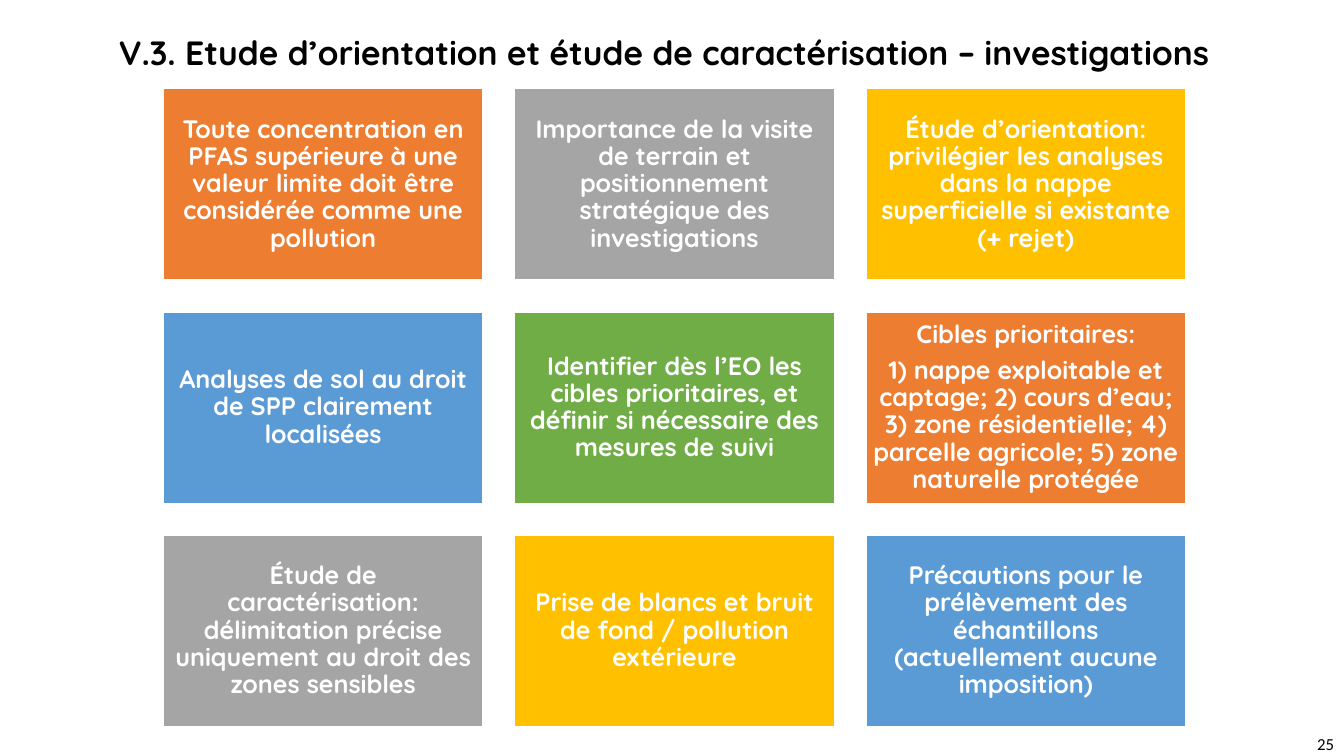
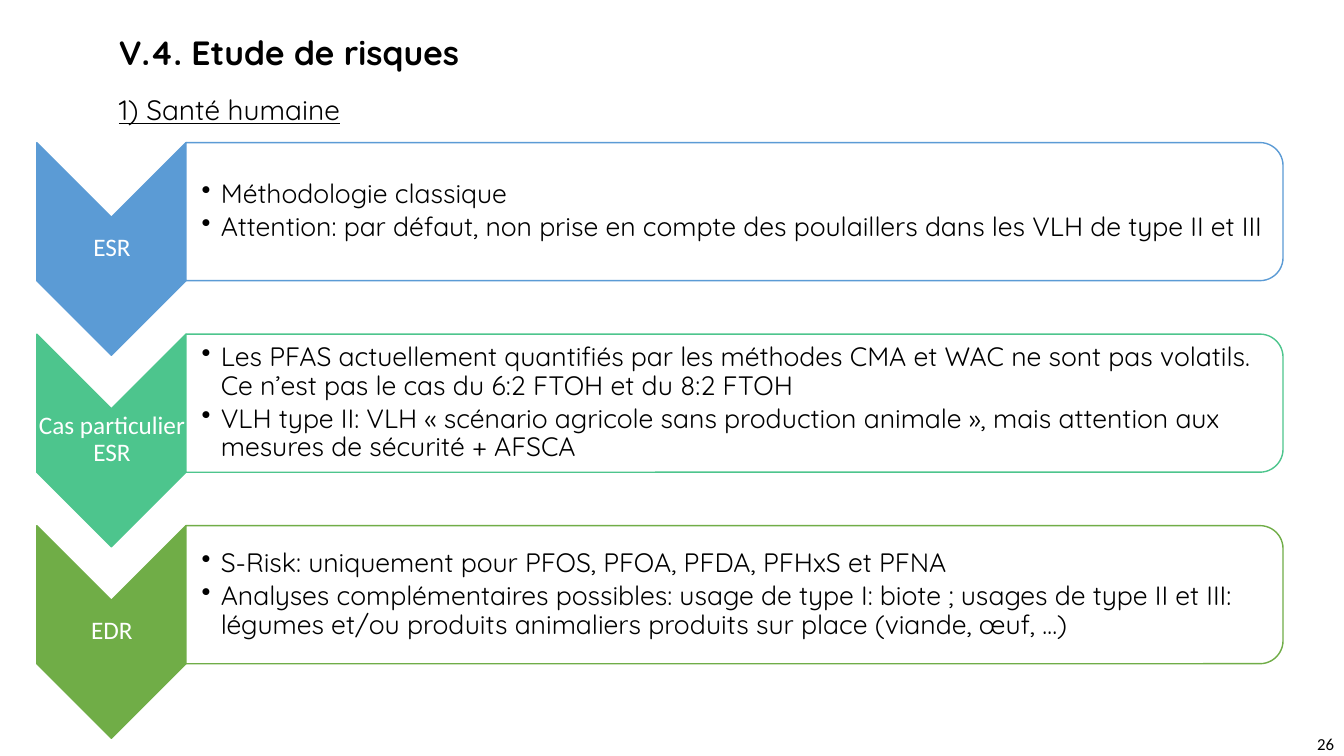
from pptx import Presentation
from pptx.dml.color import RGBColor as RGB
from pptx.enum.shapes import MSO_SHAPE as Kind
from pptx.enum.text import MSO_ANCHOR as Anchor, PP_ALIGN as Align
from pptx.oxml.ns import qn
from pptx.util import Inches, Pt
from lxml import etree

INK = {"black": "000000", "white": "FFFFFF", "orange": "ED7D31", "gray": "A5A5A5",
       "gold": "FFC000", "blue": "5B9BD5", "green": "70AD47", "mint": "4DC58D"}
HEAD = dict(size=24, bold=True, align=Align.JUSTIFY)

deck = Presentation()
deck.slide_width, deck.slide_height = Inches(13.33), Inches(7.5)


def draw(slide, kind, x, y, w, h, fill, line, turn=0):
    """Add a filled and outlined shape."""
    shape = slide.shapes.add_shape(kind, Inches(x), Inches(y), Inches(w), Inches(h))
    shape.shadow.inherit = False
    shape.rotation = turn
    shape.fill.solid()
    shape.fill.fore_color.rgb = RGB.from_string(INK[fill])
    shape.line.color.rgb = RGB.from_string(INK[line])
    shape.line.width = Pt(1)
    return shape


def write(shape, *lines, size=18, font="Quicksand", color="black", bold=False,
          under=False, align=Align.LEFT, anchor=Anchor.TOP, pad=None, left=None,
          lead=None, gap=0, bullet=False):
    """Put one paragraph per line into the shape."""
    frame = shape.text_frame
    frame.word_wrap = True
    frame.vertical_anchor = anchor
    if pad is not None:
        frame.margin_right = frame.margin_top = frame.margin_bottom = Inches(pad)
        frame.margin_left = Inches(pad if left is None else left)
    for i, line in enumerate(lines):
        para = frame.paragraphs[0] if i == 0 else frame.add_paragraph()
        if bullet:
            props = para._p.get_or_add_pPr()
            props.set("marL", str(Inches(0.19)))
            props.set("indent", str(-Inches(0.19)))
            etree.SubElement(props, qn("a:buChar"), char="•")
        para.text = line
        para.alignment = align
        if lead:
            para.line_spacing = lead
        if i:
            para.space_before = Pt(gap)
        face = para.font
        face.name, face.size, face.bold, face.underline = font, Pt(size), bold, under
        face.color.rgb = RGB.from_string(INK[color])


# Slides with their shared title and page number
pages = []
for num, title in [
    (25, "V.3. Etude d’orientation et étude de caractérisation – investigations"),
    (26, "V.4. Etude de risques"),
]:
    page = deck.slides.add_slide(deck.slide_layouts[6])
    box = page.shapes.add_textbox(Inches(10.33), Inches(7.23), Inches(3), Inches(0.3))
    write(box, str(num), size=12, font="Calibri", align=Align.RIGHT, anchor=Anchor.MIDDLE)
    box = page.shapes.add_textbox(Inches(1.08), Inches(0.27), Inches(11.4), Inches(0.5))
    write(box, title, **HEAD)
    pages.append(page)
grid, risk = pages

# Grid of nine cards, colours in rotation
cards = [
    ["Toute concentration en PFAS supérieure à une valeur limite doit être considérée comme une pollution"],
    ["Importance de la visite de terrain et positionnement stratégique des investigations"],
    ["Étude d’orientation: privilégier les analyses dans la nappe superficielle si existante (+ rejet)"],
    ["Analyses de sol au droit de SPP clairement localisées"],
    ["Identifier dès l’EO les cibles prioritaires, et définir si nécessaire des mesures de suivi"],
    ["Cibles prioritaires:",
     "1) nappe exploitable et captage; 2) cours d’eau; 3) zone résidentielle; "
     "4) parcelle agricole; 5) zone naturelle protégée"],
    ["Étude de caractérisation: délimitation précise uniquement au droit des zones sensibles"],
    ["Prise de blancs et bruit de fond / pollution extérieure"],
    ["Précautions pour le prélèvement des échantillons (actuellement aucune imposition)"],
]
wheel = ["orange", "gray", "gold", "blue", "green"]
for i, lines in enumerate(cards):
    row, col = divmod(i, 3)
    card = draw(grid, Kind.RECTANGLE, 1.62 + 3.485 * col, 0.88 + 2.215 * row, 3.17, 1.9,
                wheel[i % len(wheel)], "white")
    write(card, *lines, color="white", bold=True, align=Align.CENTER,
          anchor=Anchor.MIDDLE, pad=0.07, lead=0.9, gap=6.3)

# Subtitle of the risk slide
box = risk.shapes.add_textbox(Inches(1.08), Inches(0.87), Inches(10.49), Inches(0.5))
write(box, "1) Santé humaine", size=20, under=True)

# Chevron steps, each with a rounded panel
steps = [
    ("ESR", "blue",
     ["Méthodologie classique",
      "Attention: par défaut, non prise en compte des poulaillers dans les VLH de type II et III"]),
    ("Cas particulier ESR", "mint",
     ["Les PFAS actuellement quantifiés par les méthodes CMA et WAC ne sont pas volatils. "
      "Ce n’est pas le cas du 6:2 FTOH et du 8:2 FTOH",
      "VLH type II: VLH « scénario agricole sans production animale », "
      "mais attention aux mesures de sécurité + AFSCA"]),
    ("EDR", "green",
     ["S-Risk: uniquement pour PFOS, PFOA, PFDA, PFHxS et PFNA",
      "Analyses complémentaires possibles: usage de type I: biote ; usages de type II et III: "
      "légumes et/ou produits animaliers produits sur place (viande, œuf, …)"]),
]
for i, (name, tint, lines) in enumerate(steps):
    drop = 1.9 * i
    draw(risk, Kind.CHEVRON, 0.05, 1.73 + drop, 2.11, 1.48, tint, tint, turn=90)
    box = risk.shapes.add_textbox(Inches(0.37), Inches(2.15 + drop), Inches(1.48), Inches(0.63))
    write(box, name, font="Calibri", color="white", align=Align.CENTER,
          anchor=Anchor.MIDDLE, pad=0.01, lead=0.9)
    draw(risk, Kind.ROUND_2_SAME_RECTANGLE, 6.6, -3.34 + drop, 1.37, 10.88,
         "white", tint, turn=90)
    box = risk.shapes.add_textbox(Inches(1.85), Inches(1.48 + drop), Inches(10.81), Inches(1.24))
    write(box, *lines, size=19, anchor=Anchor.MIDDLE, pad=0.01, left=0.15,
          lead=0.9, gap=3, bullet=True)

deck.save("out.pptx")
